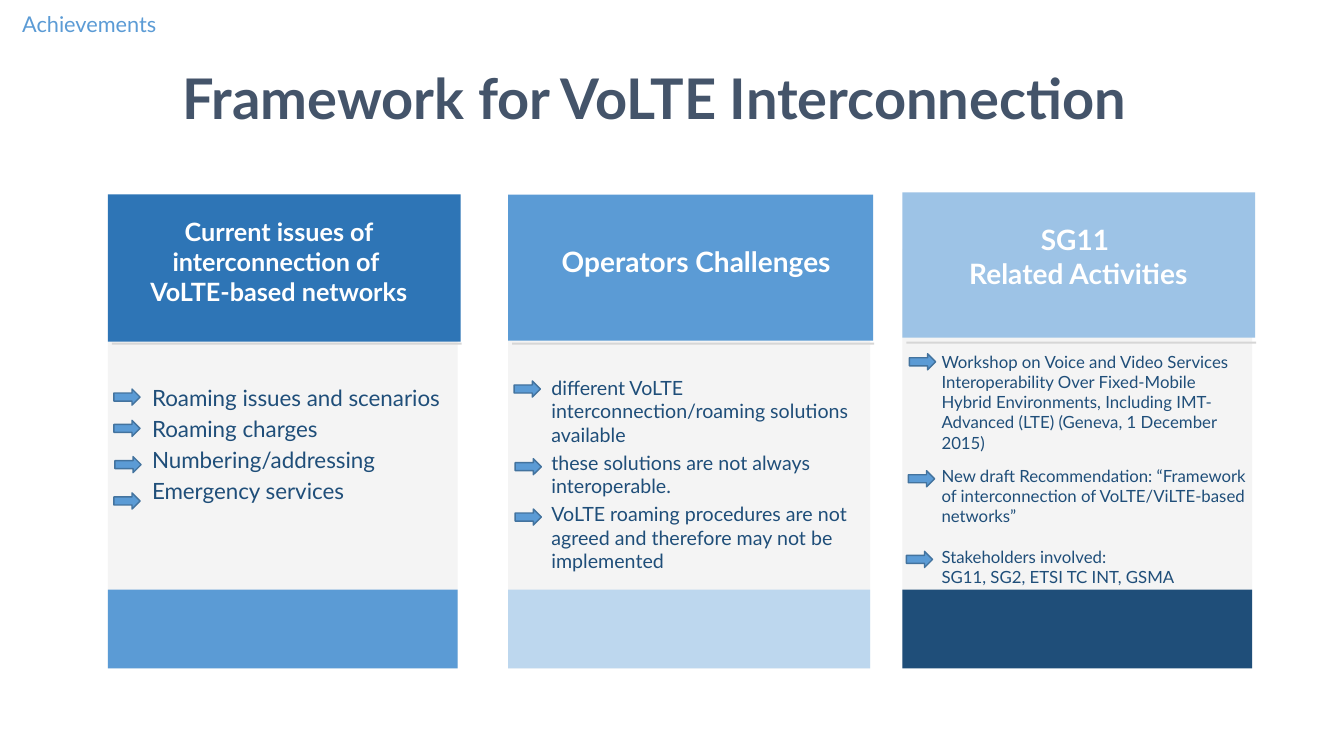
from pptx import Presentation
from pptx.dml.color import RGBColor
from pptx.enum.shapes import MSO_SHAPE as Shape
from pptx.enum.text import MSO_ANCHOR as Anchor, PP_ALIGN as Align
from pptx.oxml.ns import qn
from pptx.util import Inches, Pt

SIZE = (13.33, 7.5)
COLORS = dict(title="44546A", sky="5B9BD5", panel="F4F4F4", rule="D6D6D6",
              white="FFFFFF", navy="1F4E79", edge="43739E", blue="2E75B6",
              pale="BDD7EE", light="9DC3E6")
FOOT, END, RULE = 5.85, 6.63, 0.02
ARROW = (0.26, 0.16)
SLIM = (0.03, 0.05, 0.03, 0.05)

# Text blocks hold: box, point size, gap before later paragraphs, paragraphs
COLUMNS = [
    dict(left=1.07, top=1.93, width=3.47, head_h=1.46, panel=2.49, rule=3.4,
         head="blue", foot="sky", label=(1.27, 2.11), head_size=18,
         title="Current issues of interconnection of \vVoLTE-based networks",
         blocks=[((1.41, 3.76, 3.34, 1.34), 16, 3,
                  ["Roaming issues and scenarios", "Roaming charges",
                   "Numbering/addressing", "Emergency services"])],
         arrows=[(1.13, 3.86), (1.13, 4.17), (1.14, 4.53), (1.13, 4.89)]),
    dict(left=5.04, top=1.93, width=3.59, head_h=1.45, panel=2.49, rule=3.4,
         head="sky", foot="pale", label=(5.41, 2.11), head_size=20,
         title="Operators Challenges",
         blocks=[((5.37, 3.68, 3.39, 2.07), 14, 3,
                  ["different VoLTE interconnection/roaming solutions available",
                   "these solutions are not always interoperable.",
                   "VoLTE roaming procedures are not agreed and therefore "
                   "may not be implemented"])],
         arrows=[(5.1, 3.78), (5.11, 4.55), (5.11, 5.05)]),
    dict(left=8.95, top=1.91, width=3.47, head_h=1.44, panel=2.47, rule=3.39,
         head="light", foot="navy", label=(9.2, 2.06), head_size=20,
         title="SG11 \vRelated Activities",
         blocks=[((9.24, 3.44, 3.24, 0.91), 12, 0,
                  ["Workshop on Voice and Video Services Interoperability Over "
                   "Fixed-Mobile Hybrid Environments, Including IMT-Advanced "
                   "(LTE) (Geneva, 1 December 2015)"]),
                 ((9.24, 4.57, 3.67, 1.31), 12, 14.4,
                  ["New draft Recommendation: “Framework \vof interconnection "
                   "of VoLTE/ViLTE-based networks”",
                   "Stakeholders involved: \vSG11, SG2, ETSI TC INT, GSMA"])],
         arrows=[(9.02, 3.51), (9.01, 4.67), (8.99, 5.47)]),
]


def rgb(name):
    return RGBColor.from_string(COLORS[name])


def shape(home, kind, box, fill, edge=None):
    item = home.add_shape(kind, *map(Inches, box))
    item.shadow.inherit = False
    item.fill.solid()
    item.fill.fore_color.rgb = rgb(fill)
    if edge:
        item.line.color.rgb = rgb(edge)
        item.line.width = Pt(1)
    else:
        item.line.fill.background()


def text(home, box, lines, size, color, bold=False, align=Align.LEFT, gap=0,
         inset=(0.1, 0.05, 0.1, 0.05), anchor=Anchor.TOP, spacing=None):
    frame = home.add_textbox(*map(Inches, box)).text_frame
    frame.word_wrap = True
    frame.vertical_anchor = anchor
    for side, pad in zip(("left", "top", "right", "bottom"), inset):
        setattr(frame, "margin_" + side, Inches(pad))
    look = dict(name="Lato", size=Pt(size), bold=bold)
    for n, line in enumerate(lines):
        para = frame.add_paragraph() if n else frame.paragraphs[0]
        para.text = line
        para.alignment = align
        if n:
            para.space_before = Pt(gap)
        if spacing:
            para.line_spacing = spacing
        for run in para.runs:
            for key, value in look.items():
                setattr(run.font, key, value)
            run.font.color.rgb = rgb(color)
        for br in para._p.findall(qn("a:br")):
            mark = br.makeelement(qn("a:rPr"), {"sz": str(int(size * 100))})
            br.append(mark)


def column(shapes, col):
    left, top, width = col["left"], col["top"], col["width"]
    group = shapes.add_group_shape().shapes
    for box, fill in (
            ((left, col["panel"], width, END - col["panel"]), "panel"),
            ((left, FOOT, width, END - FOOT), col["foot"]),
            ((left + 0.04, col["rule"], width, RULE), "rule"),
            ((left, top, width + 0.03, col["head_h"]), col["head"])):
        shape(group, Shape.RECTANGLE, box, fill)
    text(shapes, (*col["label"], 2.99, 0.97), [col["title"]], col["head_size"],
         "white", True, Align.CENTER, inset=SLIM, anchor=Anchor.MIDDLE)
    for box, size, gap, lines in col["blocks"]:
        text(shapes, box, lines, size, "navy", gap=gap)
    for spot in col["arrows"]:
        shape(shapes, Shape.RIGHT_ARROW, spot + ARROW, "sky", "edge")


def main():
    deck = Presentation()
    deck.slide_width, deck.slide_height = map(Inches, SIZE)
    shapes = deck.slides.add_slide(deck.slide_layouts[6]).shapes
    text(shapes, (1.14, 0.61, 10.7, 0.72),
         ["Framework for VoLTE Interconnection"], 40, "title", True,
         Align.CENTER, inset=(0.05, 0.02, 0.05, 0.02))
    text(shapes, (0, 0, 1.77, 0.44), ["Achievements"], 15.5, "sky",
         align=Align.CENTER, inset=(0.12, 0.06, 0.12, 0.06), spacing=1.2)
    for col in COLUMNS:
        column(shapes, col)
    deck.save("out.pptx")


if __name__ == "__main__":
    main()
